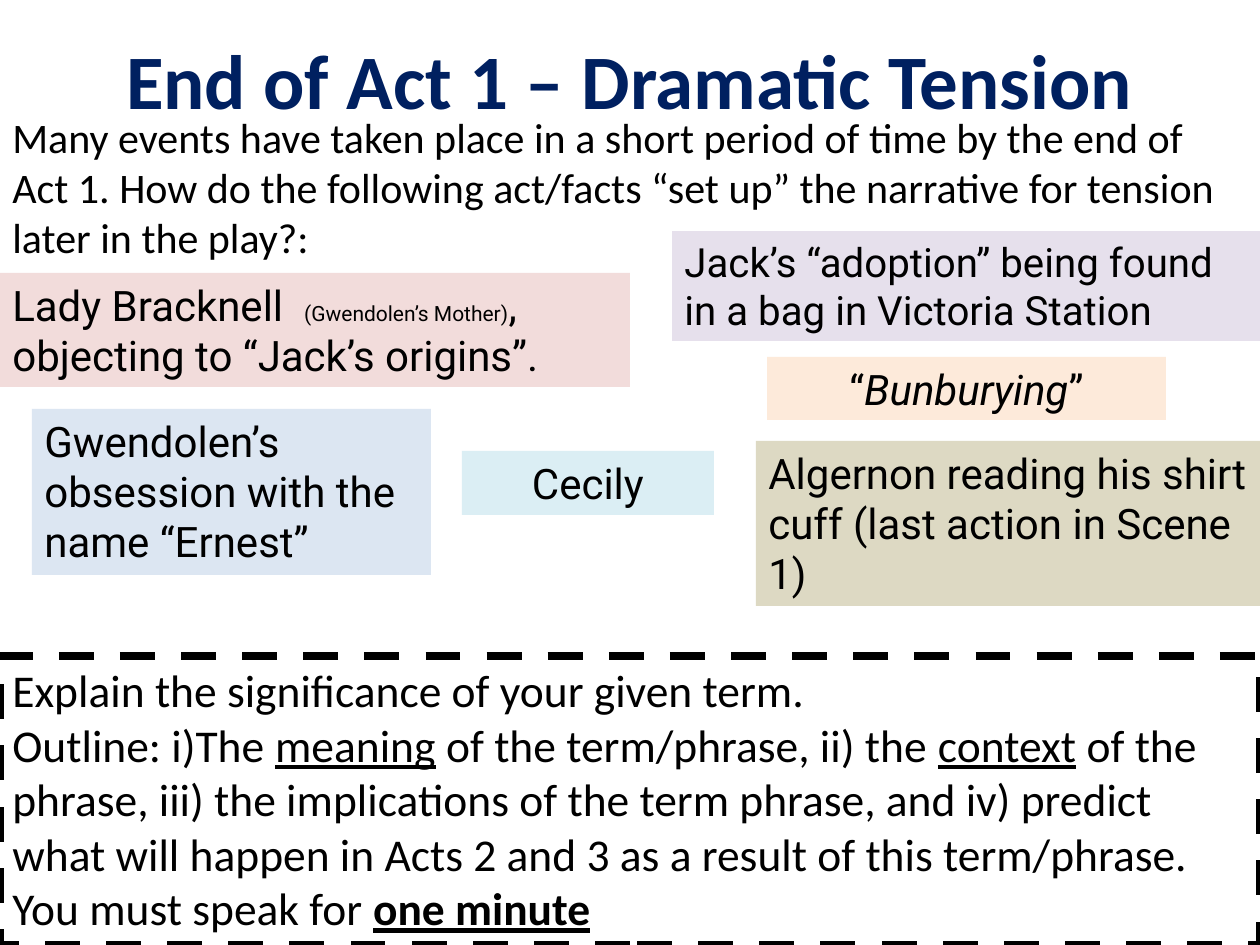
from pptx import Presentation
from pptx.dml.color import RGBColor
from pptx.enum.dml import MSO_LINE_DASH_STYLE as Dash
from pptx.enum.shapes import MSO_SHAPE as Shape
from pptx.enum.text import MSO_ANCHOR as Anchor, PP_ALIGN as Align
from pptx.util import Emu, Pt

PX = 914400 / 126
SLIDE_SIZE = (1260, 945)

BLACK = RGBColor(0x00, 0x00, 0x00)
NAVY = RGBColor(0x00, 0x20, 0x60)
PINK = RGBColor(0xF2, 0xDC, 0xDB)
LILAC = RGBColor(0xE6, 0xE0, 0xEC)
BLUE = RGBColor(0xDC, 0xE6, 0xF2)
PEACH = RGBColor(0xFD, 0xEA, 0xDA)
TAN = RGBColor(0xDD, 0xD9, 0xC3)
AQUA = RGBColor(0xDB, 0xEE, 0xF4)

ITALIC = {"italic": True}
UNDERLINE = {"underline": True}
SMALL = {"size": Pt(12)}

# Each paragraph is a list of (text, format) spans.
TITLE = [[("End of Act 1 – Dramatic Tension", {"bold": True})]]
QUESTION = [[("Many events have taken place in a short period of time by the end of "
              "Act 1. How do the following act/facts “set up” the narrative for "
              "tension later in the play?:", {})]]
TASK = [
    [("Explain the significance of your given term.", {})],
    [("Outline: i)The ", {}), ("meaning", UNDERLINE),
     (" of the term/phrase, ii) the ", {}), ("context", UNDERLINE),
     (" of the phrase, iii) the implications of the term phrase, and iv) predict "
      "what will happen in Acts 2 and 3 as a result of this term/phrase.", {})],
    [("You must speak for ", {}), ("one minute", {"bold": True, "underline": True})],
]

# (left, top, width, height), fill, size, alignment, spans
EVENTS = [
    ((0, 273, 630, 114), PINK, 24, Align.LEFT,
     [("Lady Bracknell  ", {}), ("(Gwendolen’s Mother)", SMALL),
      (", objecting to “Jack’s origins”.", {})]),
    ((672, 231, 588, 110), LILAC, 23, Align.LEFT,
     [("Jack’s “adoption” being found in a bag in Victoria Station", {})]),
    ((32, 409, 399, 166), BLUE, 24, Align.LEFT,
     [("Gwendolen’s obsession with the name “Ernest”", {})]),
    ((767, 357, 399, 63), PEACH, 24, Align.CENTER,
     [("“", {}), ("Bunburying", ITALIC), ("”", {})]),
    ((756, 441, 504, 165), TAN, 24, Align.LEFT,
     [("Algernon reading his shirt cuff (last action in Scene 1)", {})]),
    ((462, 451, 252, 64), AQUA, 24, Align.CENTER, [("Cecily", {})]),
]


def emu(lengths):
    return [Emu(round(length * PX)) for length in lengths]


def write(box, paragraphs, font, size, align=Align.LEFT, color=BLACK, anchor=Anchor.TOP):
    frame = box.text_frame
    frame.word_wrap = True
    frame.vertical_anchor = anchor
    for index, spans in enumerate(paragraphs):
        para = frame.add_paragraph() if index else frame.paragraphs[0]
        para.alignment = align
        for text, extra in spans:
            span = para.add_run()
            span.text = text
            span.font.color.rgb = color
            for name, value in {"name": font, "size": Pt(size), **extra}.items():
                setattr(span.font, name, value)


def add_rectangle(page, place):
    """Add a rectangle with no shadow, fill or line."""
    box = page.shapes.add_shape(Shape.RECTANGLE, *emu(place))
    box.shadow.inherit = False
    box.fill.background()
    box.line.fill.background()
    return box


def main():
    deck = Presentation()
    deck.slide_width, deck.slide_height = emu(SLIDE_SIZE)
    page = deck.slides.add_slide(deck.slide_layouts[6])

    title = page.shapes.add_textbox(*emu((63, 0, 1134, 158)))
    write(title, TITLE, "Calibri", 44, Align.CENTER, NAVY, Anchor.MIDDLE)
    question = page.shapes.add_textbox(*emu((0, 105, 1260, 165)))
    write(question, QUESTION, "Calibri", 24)

    for place, fill, size, align, spans in EVENTS:
        event = add_rectangle(page, place)
        event.fill.solid()
        event.fill.fore_color.rgb = fill
        write(event, [spans], "Roboto", size, align)

    task = add_rectangle(page, (0, 656, 1260, 289))
    task.line.color.rgb = BLACK
    task.line.width = Pt(5)
    task.line.dash_style = Dash.DASH
    write(task, TASK, "Calibri", 26)

    deck.save("out.pptx")


if __name__ == "__main__":
    main()
